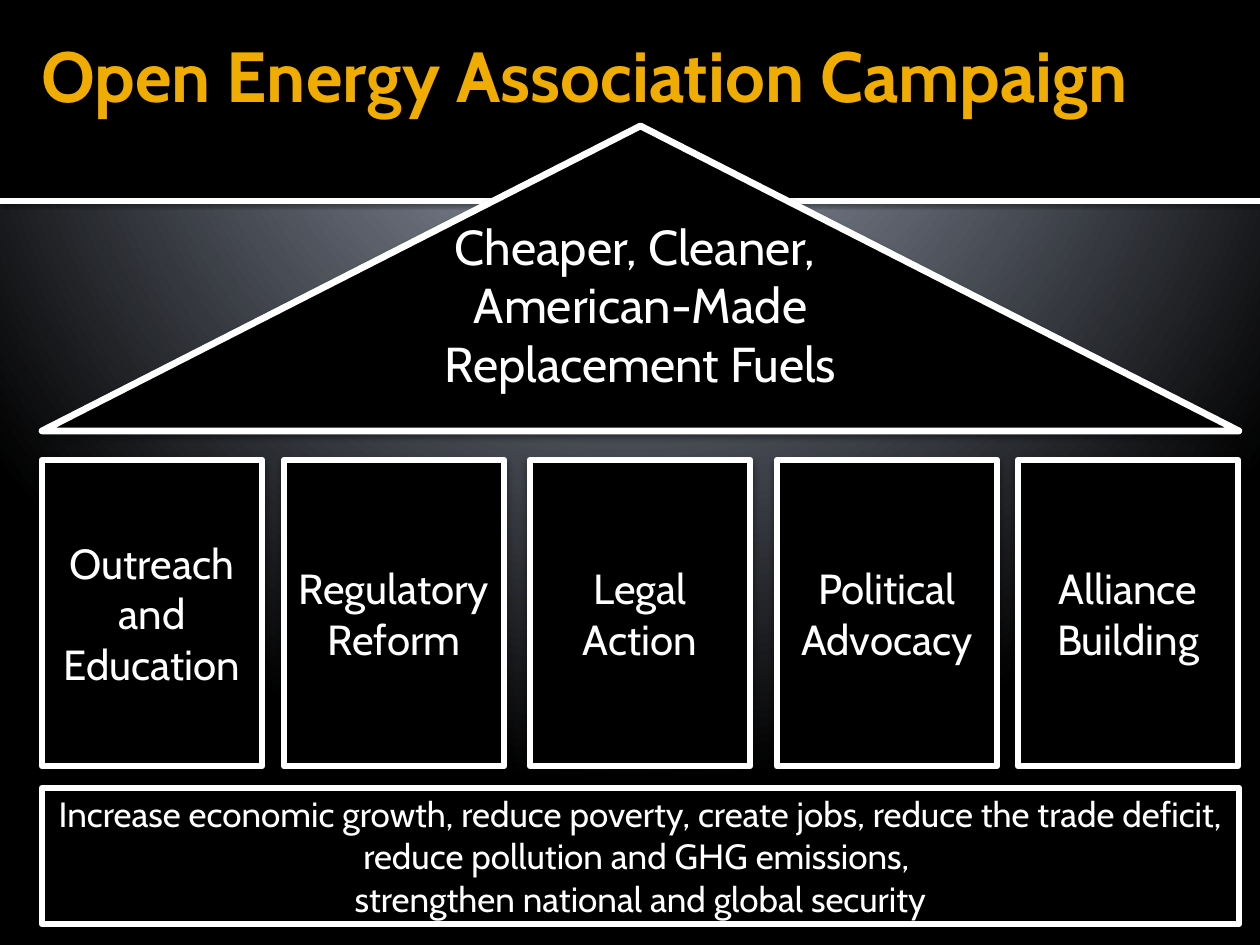
from lxml import etree
from pptx import Presentation
from pptx import util as u
from pptx.dml.color import RGBColor
from pptx.enum import shapes, text
from pptx.oxml import parse_xml
from pptx.oxml.ns import nsdecls, qn

TITLE = "Open Energy Association Campaign"
GOAL = ["Cheaper, Cleaner, ", "American-Made Replacement Fuels"]
PILLARS = [
    (42, "Outreach and Education"),
    (284, "Regulatory Reform"),
    (530, "Legal Action"),
    (777, "Political Advocacy"),
    (1018, "Alliance Building"),
]
BENEFITS = [
    "Increase economic growth, reduce poverty, create jobs, reduce the trade deficit, "
    "reduce pollution and GHG emissions, ",
    "strengthen national and global security",
]
COLORS = {"black": "000000", "white": "FFFFFF", "gold": "F0AD00",
          "silver": "C0C0C0", "steel": "98A0B2"}
GLOW = [(0, "silver"), (7, "silver"), (7, "steel"), (100, "black")]
BAND_SHADOW = (60, 2.5, 0.8)
PART_SHADOW = (38, 3.5, 2)
RECTANGLE = shapes.MSO_SHAPE.RECTANGLE
TRIANGLE = shapes.MSO_SHAPE.ISOSCELES_TRIANGLE
SCALE = 914400 / 126


def px(value):
    return u.Emu(round(value * SCALE))


def rgb(name):
    return RGBColor.from_string(COLORS[name])


def set_background(slide):
    slide.background.fill.solid()
    properties = slide.element.find(".//" + qn("p:bgPr"))
    stops = "".join(f'<a:gs pos="{pos * 1000}"><a:srgbClr val="{COLORS[name]}"/></a:gs>'
                    for pos, name in GLOW)
    gradient = parse_xml(
        f'<a:gradFill {nsdecls("a")} rotWithShape="1"><a:gsLst>{stops}</a:gsLst>'
        '<a:path path="circle"><a:fillToRect l="10000" t="-25000" r="10000" b="125000"/>'
        '</a:path></a:gradFill>')
    properties.replace(properties[0], gradient)


def add_shadow(shape, alpha, blur, distance):
    shape.shadow.inherit = False
    effects = shape.element.spPr.find(qn("a:effectLst"))
    effects.append(parse_xml(
        f'<a:outerShdw {nsdecls("a")} blurRad="{u.Pt(blur)}" dist="{u.Pt(distance)}" '
        f'dir="5400000" rotWithShape="0"><a:srgbClr val="{COLORS["black"]}">'
        f'<a:alpha val="{alpha * 1000}"/></a:srgbClr></a:outerShdw>'))


def write(shape, lines, size, color="white", bold=False,
          align=text.PP_ALIGN.CENTER, anchor=text.MSO_ANCHOR.MIDDLE):
    frame = shape.text_frame
    frame.word_wrap = True
    frame.vertical_anchor = anchor
    font_format = {"name": "Cabin", "size": u.Pt(size), "bold": bold}
    for index, line in enumerate(lines):
        paragraph = frame.paragraphs[0] if index == 0 else frame.add_paragraph()
        paragraph.alignment = align
        run = paragraph.add_run()
        run.text = line
        for key, value in font_format.items():
            setattr(run.font, key, value)
        run.font.color.rgb = rgb(color)


def add_filled(slide, kind, box, fill):
    shape = slide.shapes.add_shape(kind, *map(px, box))
    shape.fill.solid()
    shape.fill.fore_color.rgb = rgb(fill)
    shape.line.fill.background()
    shape.shadow.inherit = False
    return shape


def add_part(slide, kind, box):
    shape = add_filled(slide, kind, box, "black")
    shape.line.color.rgb = rgb("white")
    shape.line.width = u.Pt(3.82)
    etree.SubElement(shape.element.spPr.find(qn("a:ln")), qn("a:round"))
    add_shadow(shape, *PART_SHADOW)
    return shape


def add_text(slide, box, lines, size, **options):
    write(slide.shapes.add_textbox(*map(px, box)), lines, size, **options)


def main():
    presentation = Presentation()
    presentation.slide_width, presentation.slide_height = px(1260), px(945)
    slide = presentation.slides.add_slide(presentation.slide_layouts[6])
    set_background(slide)

    rule = add_filled(slide, RECTANGLE, (0, 198, 1260, 6), "white")
    add_shadow(rule, *BAND_SHADOW)
    add_filled(slide, RECTANGLE, (0, 0, 1260, 198), "black")
    add_text(slide, (29, 2, 1207, 145), [TITLE], 40.5, color="gold", bold=True,
             align=text.PP_ALIGN.LEFT)

    add_part(slide, TRIANGLE, (42, 126, 1197, 305))
    add_text(slide, (362, 210, 557, 251), GOAL, 28, anchor=text.MSO_ANCHOR.TOP)
    for left, label in PILLARS:
        write(add_part(slide, RECTANGLE, (left, 460, 220, 306)), [label], 24)
    write(add_part(slide, RECTANGLE, (42, 788, 1197, 136)), BENEFITS, 20)

    presentation.save("out.pptx")


if __name__ == "__main__":
    main()
